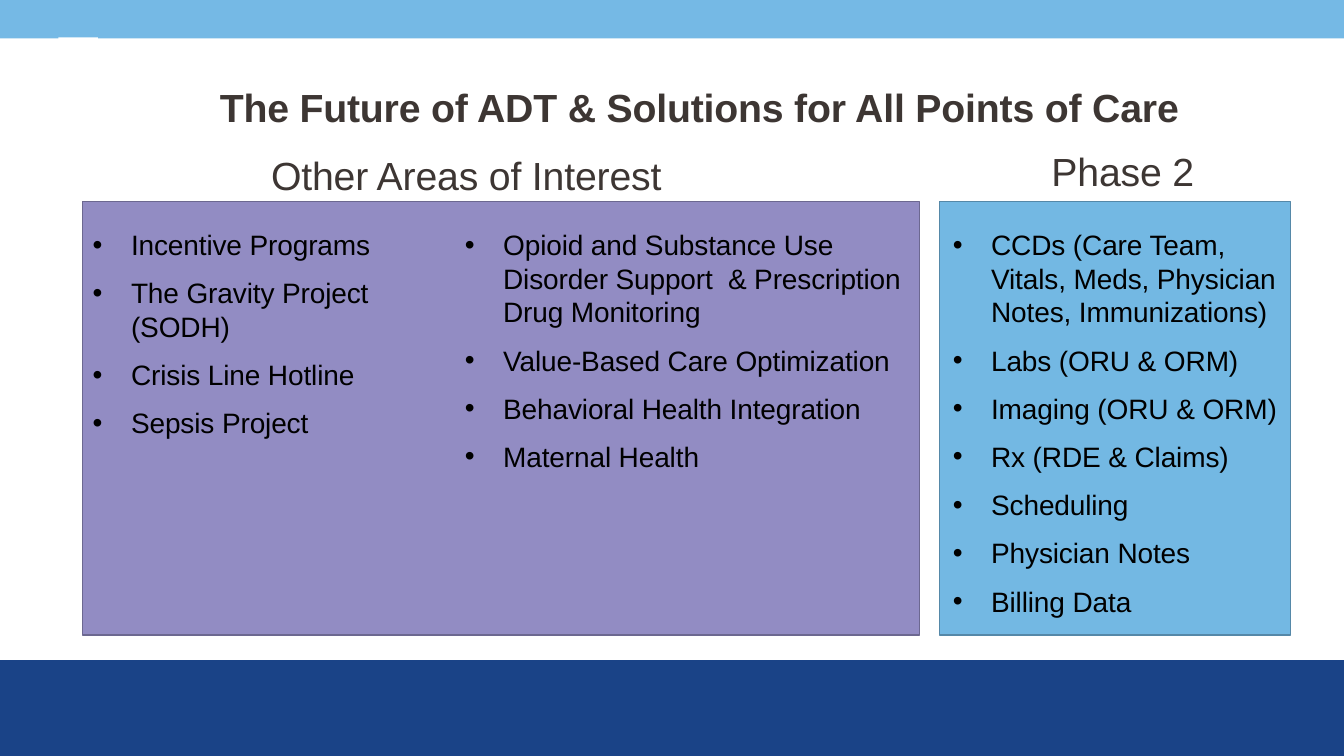
from dataclasses import dataclass

from lxml.etree import SubElement
from pptx import Presentation
from pptx.dml.color import RGBColor as RGB
from pptx.enum.shapes import MSO_SHAPE as SHAPE
from pptx.oxml.ns import qn
from pptx.util import Inches, Pt


@dataclass(frozen=True)
class Theme:
    font: str = "Arial"
    heading_size: float = 28
    body_size: float = 20
    item_gap: float = 10.4
    tracking: str = "-10"
    white: str = "FFFFFF"
    navy: str = "1A4387"
    sky: str = "75B9E5"
    heading: str = "3D3633"
    body: str = "000000"
    purple: str = "928CC3"
    purple_line: str = "6C6890"
    blue: str = "73B8E3"
    blue_line: str = "5588A8"


THEME = Theme()
SLIDE_W, SLIDE_H = 13.33, 7.5
PANEL_TOP, PANEL_H = 2, 4.3
LIST_DROP = 0.1

INTEREST_COLUMNS = [
    (0.09, 3.36, ["Incentive Programs", "The Gravity Project (SODH)",
                  "Crisis Line Hotline", "Sepsis Project"]),
    (3.78, 4.49, ["Opioid and Substance Use Disorder Support  & Prescription Drug Monitoring",
                  "Value-Based Care Optimization", "Behavioral Health Integration",
                  "Maternal Health"]),
]
PHASE_COLUMNS = [
    (0.12, 3.36, ["CCDs (Care Team, Vitals, Meds, Physician Notes, Immunizations)",
                  "Labs (ORU & ORM)", "Imaging (ORU & ORM)", "Rx (RDE & Claims)",
                  "Scheduling", "Physician Notes", "Billing Data"]),
]


def add_rect(s, box, fill, line=None):
    sp = s.shapes.add_shape(SHAPE.RECTANGLE, *map(Inches, box))
    sp.shadow.inherit = False
    sp.fill.solid()
    sp.fill.fore_color.rgb = RGB.from_string(fill)
    if line:
        sp.line.color.rgb = RGB.from_string(line)
        sp.line.width = Pt(1)
    else:
        sp.line.fill.background()


def add_frame(s, box, insets):
    """Add a wrapping text box; insets run left, top, right, bottom."""
    tf = s.shapes.add_textbox(*map(Inches, box)).text_frame
    tf.word_wrap = True
    for side, inset in zip(("left", "top", "right", "bottom"), insets):
        setattr(tf, f"margin_{side}", Inches(inset))
    return tf


def add_run(p, text, size, color, bold=False):
    r = p.add_run()
    r.text = text
    formats = {"name": THEME.font, "size": Pt(size), "bold": bold}
    for name, value in formats.items():
        setattr(r.font, name, value)
    r.font.color.rgb = RGB.from_string(color)
    r._r.get_or_add_rPr().set("spc", THEME.tracking)


def add_heading(s, box, text, bold=False, insets=(0.1, 0.05, 0.1, 0.05)):
    p = add_frame(s, box, insets).paragraphs[0]
    add_run(p, text, THEME.heading_size, THEME.heading, bold)


def add_bullet(p):
    """Give a paragraph a hanging bullet."""
    pPr = p._p.get_or_add_pPr()
    pPr.set("marL", str(Inches(0.39)))
    pPr.set("indent", str(Inches(-0.38)))
    SubElement(pPr, qn("a:buFont")).set("typeface", THEME.font)
    SubElement(pPr, qn("a:buChar")).set("char", "•")


def add_bullets(s, box, items):
    tf = add_frame(s, box, (0, 0.16, 0, 0))
    for i, item in enumerate(items):
        p = tf.add_paragraph() if i else tf.paragraphs[0]
        add_bullet(p)
        if i:
            p.space_before = Pt(THEME.item_gap)
        add_run(p, item, THEME.body_size, THEME.body)


def add_panel(s, box, fill, line, columns):
    """Add a filled panel; each column is (offset from its left, width, items)."""
    left, top, _, height = box
    add_rect(s, box, fill, line)
    for offset, width, items in columns:
        add_bullets(s, (left + offset, top + LIST_DROP, width, height - 2 * LIST_DROP), items)


def add_bands(s):
    footer_top = 6.55
    add_rect(s, (0, footer_top, SLIDE_W, SLIDE_H - footer_top), THEME.navy)
    add_rect(s, (0, 0, SLIDE_W, 0.38), THEME.sky)
    add_rect(s, (0.58, 0.37, 0.39, 0.41), THEME.white)


def main():
    prs = Presentation()
    prs.slide_width, prs.slide_height = Inches(SLIDE_W), Inches(SLIDE_H)
    s = prs.slides.add_slide(prs.slide_layouts[6])
    add_bands(s)
    add_heading(s, (2.17, 0.82, 10.08, 0.49),
                "The Future of ADT & Solutions for All Points of Care",
                bold=True, insets=(0.01, 0.01, 0, 0))
    add_panel(s, (0.82, PANEL_TOP, 8.3, PANEL_H),
              THEME.purple, THEME.purple_line, INTEREST_COLUMNS)
    add_panel(s, (9.32, PANEL_TOP, 3.48, PANEL_H),
              THEME.blue, THEME.blue_line, PHASE_COLUMNS)
    add_heading(s, (2.59, 1.45, 4.4, 0.57), "Other Areas of Interest")
    add_heading(s, (10.33, 1.41, 2.01, 0.57), "Phase 2")
    prs.save("out.pptx")


if __name__ == "__main__":
    main()
